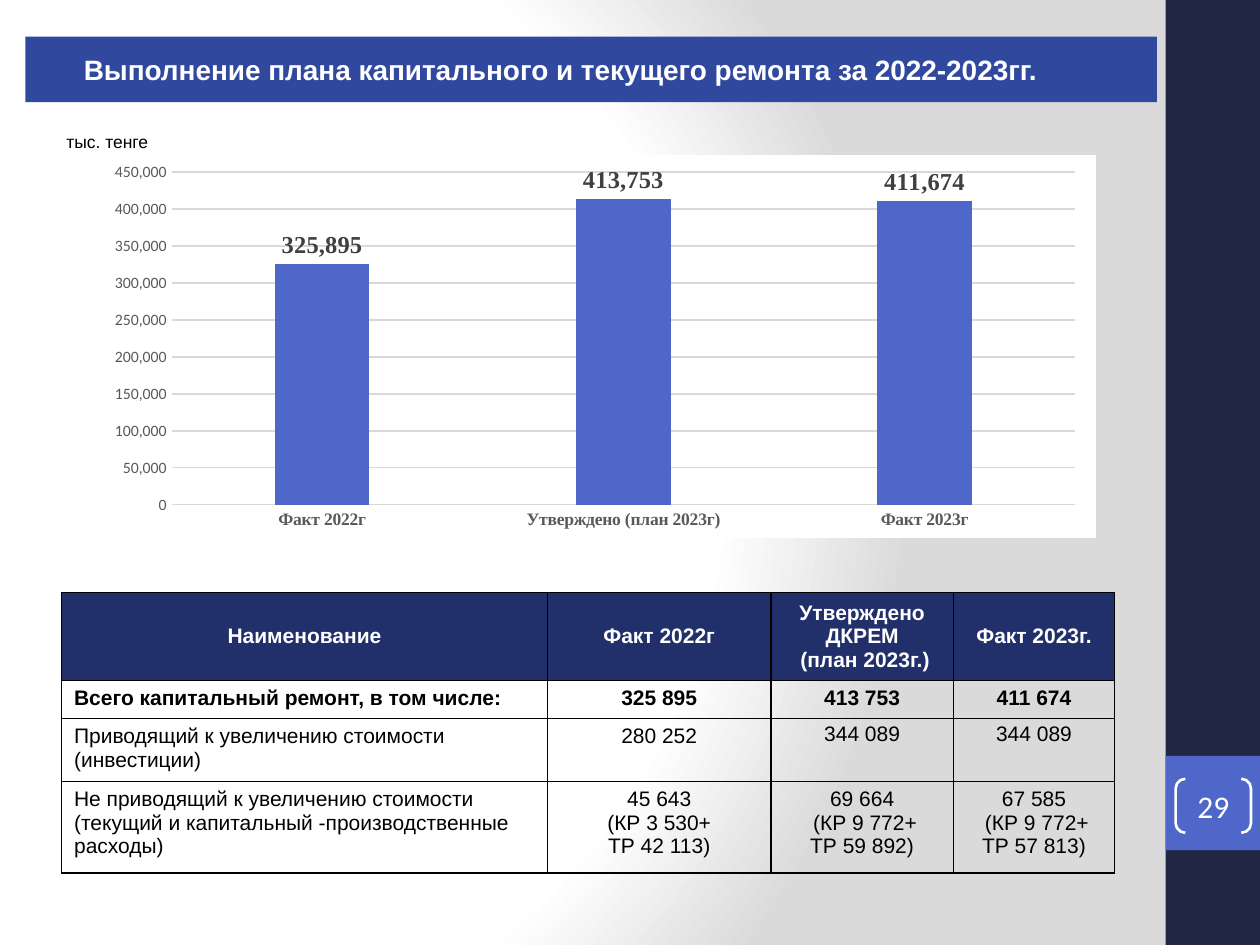
"""Build the slide on the repair plan for 2022-2023: a column chart and a table."""
from pptx import Presentation
from pptx.chart.data import CategoryChartData
from pptx.dml.color import RGBColor
from pptx.enum.chart import XL_CHART_TYPE, XL_LABEL_POSITION, XL_TICK_MARK
from pptx.enum.shapes import MSO_SHAPE
from pptx.enum.text import MSO_ANCHOR, MSO_AUTO_SIZE, PP_ALIGN
from pptx.oxml import parse_xml
from pptx.oxml.ns import nsdecls
from pptx.util import Cm, Pt

RECT, PAIR = MSO_SHAPE.RECTANGLE, MSO_SHAPE.DOUBLE_BRACKET
COLUMN, ABOVE = XL_CHART_TYPE.COLUMN_CLUSTERED, XL_LABEL_POSITION.OUTSIDE_END
NO_TICK = XL_TICK_MARK.NONE
MIDDLE, TOP = MSO_ANCHOR.MIDDLE, MSO_ANCHOR.TOP
LEFT, CENTER = PP_ALIGN.LEFT, PP_ALIGN.CENTER
GROW, FIXED = MSO_AUTO_SIZE.SHAPE_TO_FIT_TEXT, MSO_AUTO_SIZE.NONE

WHITE = RGBColor(0xFF, 0xFF, 0xFF)
BLACK = RGBColor(0x00, 0x00, 0x00)
NAVY = RGBColor(0x21, 0x27, 0x45)
BLUE = RGBColor(0x4E, 0x67, 0xC8)
BANNER = RGBColor(0x31, 0x48, 0x9F)
HEADER = RGBColor(0x21, 0x30, 0x6A)
GRID = RGBColor(0xD9, 0xD9, 0xD9)
GREY = RGBColor(0x59, 0x59, 0x59)
DARK = RGBColor(0x40, 0x40, 0x40)


def style(font, name, size, color, bold=False):
    font.name, font.size, font.bold = name, Pt(size), bold
    font.color.rgb = color


def edge(cell):
    props = cell._tc.get_or_add_tcPr()
    for i, side in enumerate(("lnL", "lnR", "lnT", "lnB")):
        props.insert(i, parse_xml(
            f'<a:{side} {nsdecls("a")} w="12700"><a:solidFill>'
            f'<a:srgbClr val="{BLACK}"/></a:solidFill></a:{side}>'))


prs = Presentation()
prs.slide_width, prs.slide_height = Cm(25.4), Cm(19.05)
slide = prs.slides.add_slide(prs.slide_layouts[5])
shapes = slide.shapes

stops = "".join(
    f'<a:gs pos="{pos}"><a:srgbClr val="{color}"/></a:gs>'
    for pos, color in ((0, "FFFFFF"), (75000, "FFFFFF"), (100000, "DADADA")))
slide._element.cSld.insert(0, parse_xml(
    f'<p:bg {nsdecls("p", "a")}><p:bgPr><a:gradFill rotWithShape="1">'
    f'<a:gsLst>{stops}</a:gsLst><a:path path="circle">'
    '<a:fillToRect l="20000" t="50000" r="100000" b="50000"/></a:path>'
    '</a:gradFill><a:effectLst/></p:bgPr></p:bg>'))

for top, height, color in ((0, 19.05, NAVY), (15.24, 1.9, BLUE)):
    panel = shapes.add_shape(RECT, Cm(23.5), Cm(top), Cm(1.9), Cm(height))
    panel.shadow.inherit = False
    panel.fill.solid()
    panel.fill.fore_color.rgb = color
    panel.line.fill.background()

page = shapes.add_shape(PAIR, Cm(23.7), Cm(15.7), Cm(1.52), Cm(1.09))
page.shadow.inherit = False
page.adjustments[0] = 0.18
page.fill.background()
page.line.color.rgb, page.line.width = WHITE, Pt(1.5)
frame = page.text_frame
frame.margin_left = frame.margin_right = frame.margin_top = frame.margin_bottom = 0
frame.vertical_anchor = MIDDLE
frame.text = "29"
frame.paragraphs[0].alignment = CENTER
style(frame.paragraphs[0].font, "Calibri", 18, WHITE)

title = shapes.title
title.left, title.top, title.width, title.height = Cm(0.51), Cm(0.74), Cm(22.81), Cm(1.32)
title._element.spPr.append(parse_xml(
    f'<a:prstGeom {nsdecls("a")} prst="snip2DiagRect"><a:avLst>'
    '<a:gd name="adj1" fmla="val 0"/><a:gd name="adj2" fmla="val 50000"/>'
    '</a:avLst></a:prstGeom>'))
title.fill.solid()
title.fill.fore_color.rgb = BANNER
frame = title.text_frame
frame.text = "Выполнение плана капитального и текущего ремонта за 2022-2023гг."
frame.auto_size, frame.vertical_anchor = FIXED, MIDDLE
frame.margin_left = frame.margin_right = Cm(0.18)
frame.margin_top = frame.margin_bottom = Cm(0.1)
para = frame.paragraphs[0]
para.alignment = LEFT
para._p.get_or_add_pPr().set("marL", str(Cm(1)))
style(para.font, "Arial", 16, WHITE, True)

unit = shapes.add_textbox(Cm(1.09), Cm(2.51), Cm(3.4), Cm(0.69))
frame = unit.text_frame
frame.word_wrap, frame.auto_size = True, GROW
frame.text = "тыс. тенге"
style(frame.paragraphs[0].font, "Arial", 10, BLACK)

data = CategoryChartData(number_format="#,##0")
data.categories = ["Факт 2022г", "Утверждено (план 2023г)", "Факт 2023г"]
data.add_series("Series 1", (325895, 413753, 411674))
chart = shapes.add_chart(COLUMN, Cm(1.9), Cm(3.12), Cm(20.19), Cm(7.72), data).chart
chart.has_legend = chart.has_title = False
style(chart.font, "Calibri", 10, BLACK)
paint = f'<a:solidFill><a:srgbClr val="{WHITE}"/></a:solidFill>'
chart._chartSpace.chart.addnext(parse_xml(
    f'<c:spPr {nsdecls("c", "a")}>{paint}<a:ln w="9525">{paint}</a:ln></c:spPr>'))

plot = chart.plots[0]
plot.gap_width, plot.overlap = 219, -27
plot.vary_by_categories = False
bars = plot.series[0]
bars.format.fill.solid()
bars.format.fill.fore_color.rgb = BLUE
labels = bars.data_labels
labels.show_value, labels.position = True, ABOVE
labels.number_format, labels.number_format_is_linked = "#,##0", False
style(labels.font, "Times New Roman", 14, DARK, True)

cats, vals = chart.category_axis, chart.value_axis
cats.major_tick_mark = vals.major_tick_mark = NO_TICK
style(cats.tick_labels.font, "Times New Roman", 10, GREY, True)
style(vals.tick_labels.font, "Calibri", 9, GREY)
vals.minimum_scale, vals.maximum_scale, vals.major_unit = 0, 450000, 50000
vals.format.line.fill.background()
for line in (cats.format.line, vals.major_gridlines.format.line):
    line.color.rgb, line.width = GRID, Pt(0.75)

rows = (
    ("Наименование", "Факт 2022г", "Утверждено ДКРЕМ\n (план 2023г.)", "Факт 2023г."),
    ("Всего капитальный ремонт, в том числе:", "325 895", "413 753", "411 674"),
    ("Приводящий к увеличению стоимости (инвестиции)", "280 252", "344 089", "344 089"),
    ("Не приводящий к увеличению стоимости "
     "(текущий и капитальный -производственные расходы)",
     "45 643\n(КР 3 530+\nТР 42 113)",
     "69 664\n (КР 9 772+\nТР 59 892)",
     "67 585\n (КР 9 772+\nТР 57 813)"),
)
table = shapes.add_table(4, 4, Cm(1.24), Cm(11.94), Cm(21.23), Cm(5.66)).table
table.first_row = table.horz_banding = False
for col, width in zip(table.columns, (9.8, 4.5, 3.68, 3.25)):
    col.width = Cm(width)
for row, height in zip(table.rows, (1.45, 0.56, 1.07, 1.85)):
    row.height = Cm(height)
for r, texts in enumerate(rows):
    for c, text in enumerate(texts):
        cell = table.cell(r, c)
        cell.text = text
        cell.vertical_anchor = TOP if r else MIDDLE
        if r:
            cell.fill.background()
        else:
            cell.fill.solid()
            cell.fill.fore_color.rgb = HEADER
        if r == 2 and c > 1:
            cell.margin_top = cell.margin_bottom = Cm(0.08)
        for para in cell.text_frame.paragraphs:
            para.alignment = LEFT if r and c == 0 else CENTER
            style(para.font, "Arial", 12, BLACK if r else WHITE, r < 2)
        edge(cell)

prs.save("out.pptx")
